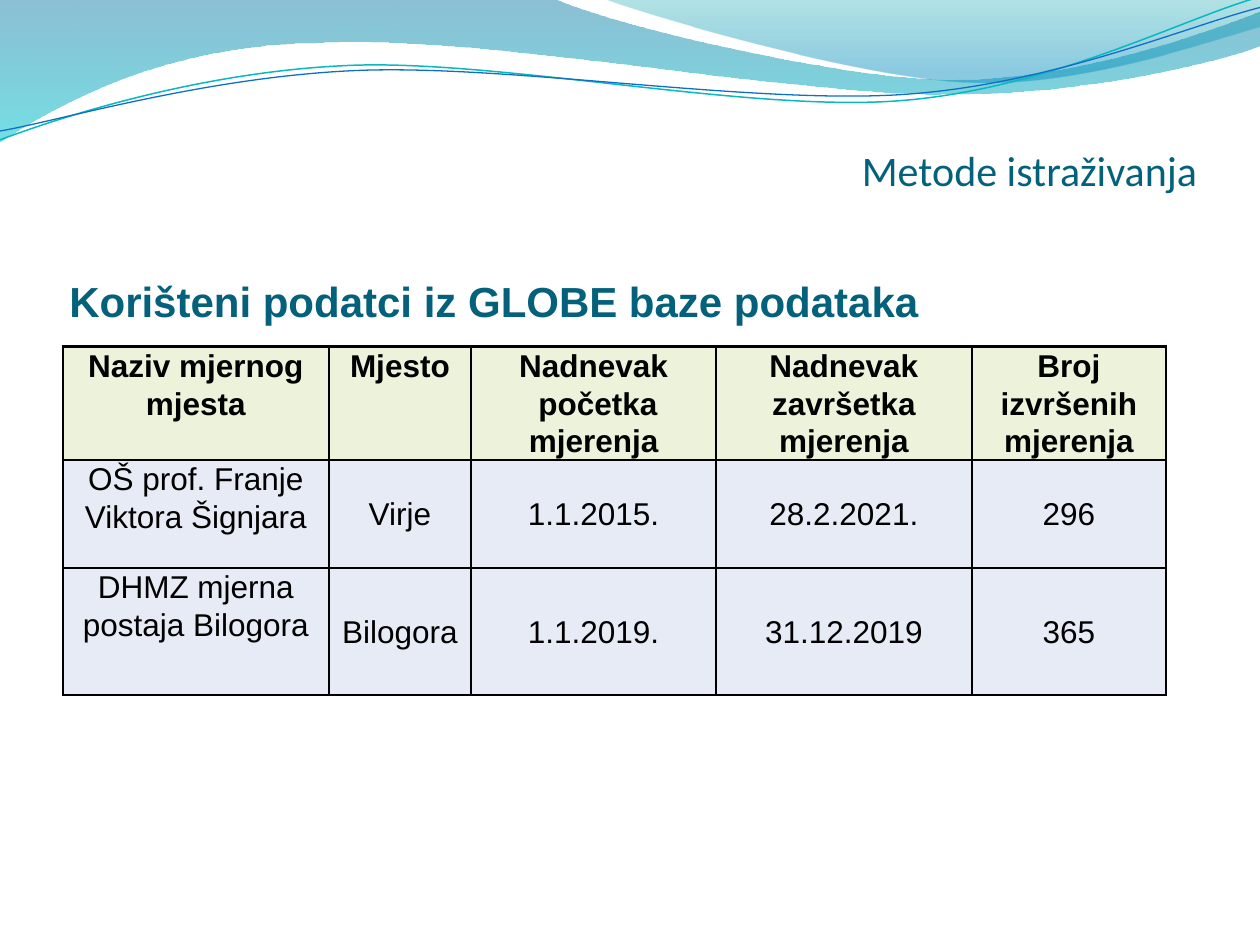
from dataclasses import dataclass
from math import cos, radians, sin
from typing import Optional

from lxml.etree import SubElement
from pptx import Presentation
from pptx.dml.color import RGBColor
from pptx.enum.text import MSO_ANCHOR as Anchor, PP_ALIGN as Align
from pptx.oxml.ns import qn
from pptx.util import Pt

TITLE_TEAL = RGBColor(0x04, 0x61, 0x7B)
BLACK = RGBColor(0, 0, 0)
HEADER_GREEN = RGBColor(0xED, 0xF3, 0xDB)
ROW_BLUE = RGBColor(0xE7, 0xEB, 0xF5)
DEEP_BLUE = RGBColor(0x00, 0x74, 0xA1)
CYAN = RGBColor(0x00, 0xC6, 0xCF)
SEA_GREEN = RGBColor(0x00, 0xA1, 0xA9)
SKY_BLUE = RGBColor(0x00, 0x8B, 0xBF)
LINE_CYAN = RGBColor(0x0A, 0xB8, 0xBF)
LINE_BLUE = RGBColor(0x0F, 0x6F, 0xC6)

TILT = -2.7


@dataclass
class Stop:
    position: float
    color: RGBColor
    opacity: int


@dataclass
class Wave:
    """Segments of one point are straight, those of three are Bézier curves."""
    start: tuple
    segments: list
    stops: tuple = ()
    line: Optional[RGBColor] = None
    weight: float = 0
    pivot: Optional[tuple] = None


WAVES = [
    Wave((0, -0.7),
         [[(316.8, -0.7)],
          [(342.7, 12.2), (478.1, 45.4), (545.8, 45.4)],
          [(614.2, 45.4), (689.8, 18.7), (720, 6.5)],
          [(720.7, 25.9)],
          [(707.8, 31.7), (626.4, 54.7), (537.1, 54)],
          [(447.8, 54), (275, 20.2), (185, 24.5)],
          [(92.9, 25.2), (33.1, 59.8), (-0.7, 81.4)],
          [(0, -0.7)]],
         stops=(Stop(0, DEEP_BLUE, 45), Stop(1, CYAN, 55))),
    Wave((344.9, -0.7),
         [[(366.5, 7.9), (491, 44.6), (553.7, 46.8)],
          [(616.3, 49.7), (691.9, 23), (720, 15.1)],
          [(720, 0)],
          [(344.9, -0.7)]],
         stops=(Stop(0, SEA_GREEN, 30), Stop(0.8, SKY_BLUE, 45))),
    Wave((0, 79.9),
         [[(34.6, 67), (113.8, 41), (199.4, 37.4)],
          [(284.4, 33.8), (427, 64.1), (513.4, 57.6)],
          [(599.8, 51.1), (675.4, 10.8), (718.6, -1.4)]],
         line=LINE_CYAN, weight=0.85, pivot=(359.3, 41.4)),
    Wave((0, 74.9),
         [[(33.8, 69.1), (118.1, 43.9), (203.8, 40.3)],
          [(290.2, 36.7), (429.8, 59.8), (516.2, 54)],
          [(601.9, 48.2), (677.5, 15.1), (720, 4.3)]],
         line=LINE_BLUE, weight=0.75, pivot=(359.6, 42.5)),
]

COLUMN_WIDTHS = [151.8, 81.5, 139.8, 146.3, 110.9]
ROW_HEIGHTS = [34.6, 61.9, 72.7]
TABLE_HEIGHT = 204.5
MEASUREMENTS = [
    ["Naziv mjernog mjesta", "Mjesto", "Nadnevak\n početka mjerenja",
     "Nadnevak\nzavršetka mjerenja", "Broj izvršenih mjerenja"],
    ["OŠ prof. Franje Viktora Šignjara", "Virje", "1.1.2015.", "28.2.2021.", "296"],
    ["DHMZ mjerna postaja Bilogora", "Bilogora", "1.1.2019.", "31.12.2019", "365"],
]


def set_all(target, values: dict) -> None:
    for name, value in values.items():
        setattr(target, name, value)


def set_font(font, color: RGBColor, **values) -> None:
    set_all(font, values)
    font.color.rgb = color


def turn(point: tuple, pivot: tuple, degrees: float) -> tuple:
    angle = radians(degrees)
    dx, dy = point[0] - pivot[0], point[1] - pivot[1]
    return (pivot[0] + dx * cos(angle) - dy * sin(angle),
            pivot[1] + dx * sin(angle) + dy * cos(angle))


def bend(shape, segments: list) -> None:
    """Join each three straight steps of a curve into one Bézier."""
    steps = iter(list(shape.element.iter(qn("a:lnTo"))))
    for segment in segments:
        first, *others = [next(steps) for _ in segment]
        if others:
            first.tag = qn("a:cubicBezTo")
            for step in others:
                first.append(step[0])
                step.getparent().remove(step)


def draw_wave(slide, wave: Wave, depth: int) -> None:
    points = [wave.start] + [point for segment in wave.segments for point in segment]
    if wave.pivot:
        points = [turn(point, wave.pivot, -TILT) for point in points]
    first, *rest = [(Pt(x), Pt(y)) for x, y in points]
    builder = slide.shapes.build_freeform(*first)
    builder.add_line_segments(rest, close=bool(wave.stops))
    shape = builder.convert_to_shape()
    bend(shape, wave.segments)
    shape.shadow.inherit = False
    if wave.stops:
        shape.line.fill.background()
        shape.fill.gradient()
        shape.fill.gradient_angle = 270
        for drawn, stop in zip(shape.fill.gradient_stops, wave.stops):
            drawn.position = stop.position
            drawn.color.rgb = stop.color
        for color, stop in zip(shape.element.spPr.iter(qn("a:srgbClr")), wave.stops):
            SubElement(color, qn("a:alpha"), val=str(stop.opacity * 1000))
    else:
        shape.fill.background()
        shape.line.color.rgb = wave.line
        shape.line.width = Pt(wave.weight)
        shape.rotation = TILT
    # Waves lie behind the placeholders
    slide.shapes.element.insert(2 + depth, shape.element)


def fill_placeholder(shape, text: str, box: tuple, frame: dict, font: dict) -> None:
    set_all(shape, dict(zip(("left", "top", "width", "height"), map(Pt, box))))
    set_all(shape.text_frame, dict(word_wrap=True, **frame))
    shape.text_frame.text = text
    paragraph = shape.text_frame.paragraphs[0]
    properties = paragraph._p.get_or_add_pPr()
    properties.set("marL", "0")
    properties.set("indent", "0")
    SubElement(properties, qn("a:buNone"))
    set_all(paragraph, dict(alignment=Align.LEFT, space_before=Pt(0)))
    set_font(paragraph.runs[0].font, TITLE_TEAL, size=Pt(24), **font)


def add_borders(cell) -> None:
    properties = cell._tc.get_or_add_tcPr()
    for side in ("lnL", "lnR", "lnT", "lnB"):
        border = SubElement(properties, qn(f"a:{side}"), w=str(Pt(1.5)))
        fill = SubElement(border, qn("a:solidFill"))
        SubElement(fill, qn("a:srgbClr"), val=str(BLACK))


def format_cell(cell, text: str, header: bool, centred: bool) -> None:
    add_borders(cell)
    cell.fill.solid()
    cell.fill.fore_color.rgb = HEADER_GREEN if header else ROW_BLUE
    set_all(cell, dict(margin_left=Pt(3), margin_right=Pt(3), margin_top=0, margin_bottom=0,
                       vertical_anchor=Anchor.MIDDLE if centred else Anchor.TOP))
    cell.text = text
    for paragraph in cell.text_frame.paragraphs:
        set_all(paragraph, dict(alignment=Align.CENTER, line_spacing=1.07))
        set_font(paragraph.runs[0].font, BLACK, size=Pt(18), name="Arial", bold=header)


def add_measurements(slide) -> None:
    frame = slide.shapes.add_table(
        len(ROW_HEIGHTS), len(COLUMN_WIDTHS), Pt(36), Pt(198),
        Pt(sum(COLUMN_WIDTHS)), Pt(TABLE_HEIGHT))
    table = frame.table
    set_all(table, dict(first_row=False, horz_banding=False))
    for column, width in zip(table.columns, COLUMN_WIDTHS):
        column.width = Pt(width)
    for r, (height, texts) in enumerate(zip(ROW_HEIGHTS, MEASUREMENTS)):
        table.rows[r].height = Pt(height)
        for c, text in enumerate(texts):
            format_cell(table.cell(r, c), text, header=r == 0, centred=r > 0 and c > 0)
    frame.height = Pt(TABLE_HEIGHT)


def main() -> None:
    deck = Presentation()
    set_all(deck, dict(slide_width=Pt(720), slide_height=Pt(540)))
    slide = deck.slides.add_slide(deck.slide_layouts[1])

    # Wave decoration
    for depth, wave in enumerate(WAVES):
        draw_wave(slide, wave, depth)

    # Title and subtitle
    fill_placeholder(
        slide.shapes.title, "Metode istraživanja", (492.5, 60.5, 227.5, 51),
        dict(vertical_anchor=Anchor.BOTTOM, margin_left=0, margin_right=0,
             margin_top=Pt(3.6), margin_bottom=0),
        dict(name="Calibri", bold=False))
    fill_placeholder(
        slide.placeholders[1], "Korišteni podatci iz GLOBE baze podataka",
        (36, 146, 630, 52),
        dict(vertical_anchor=Anchor.MIDDLE, margin_left=Pt(3.6), margin_right=Pt(3.6),
             margin_top=0, margin_bottom=0),
        dict(name="Arial", bold=True))

    # Measurement table
    add_measurements(slide)
    deck.save("out.pptx")


if __name__ == "__main__":
    main()
